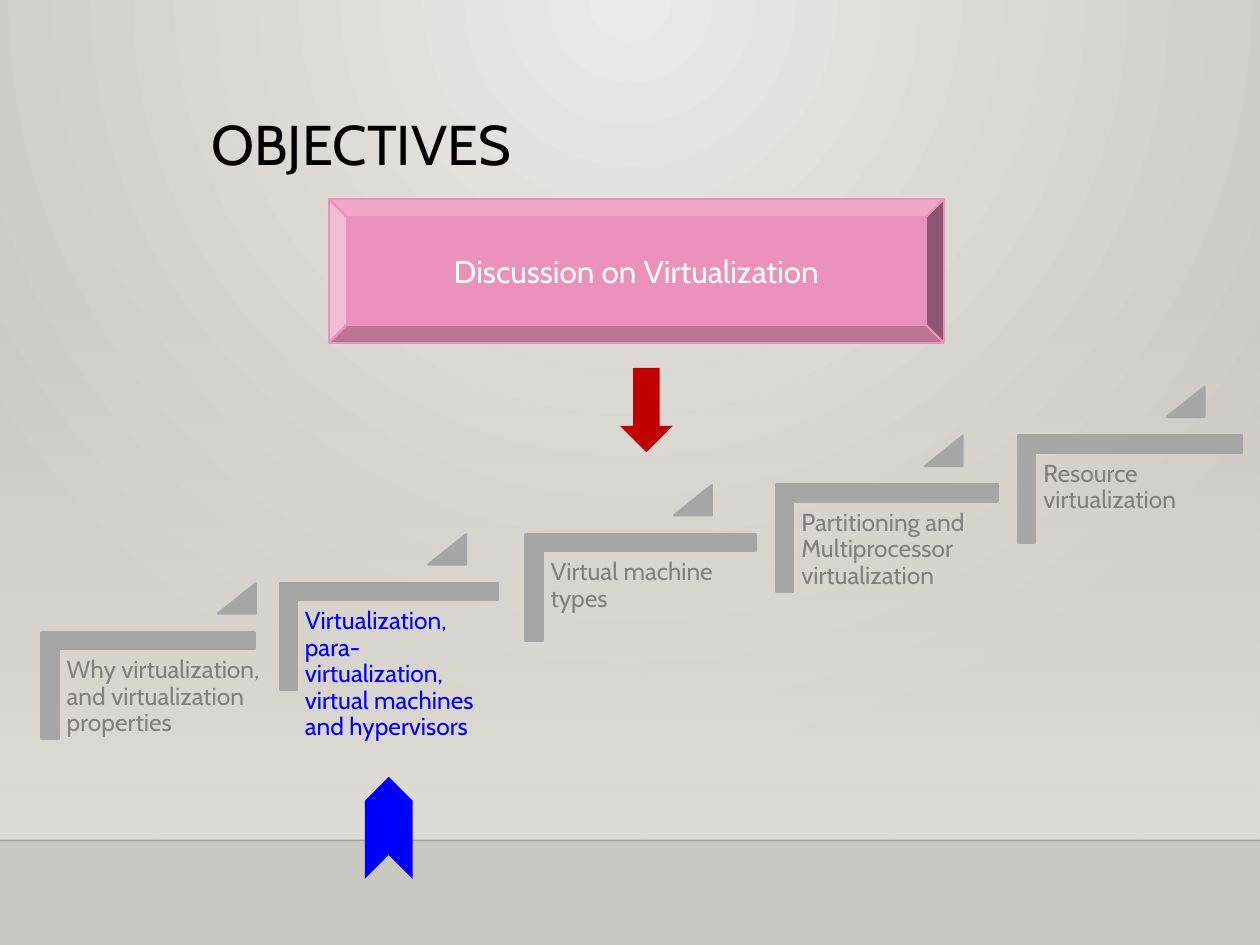
from lxml import etree
from pptx import Presentation
from pptx.dml.color import RGBColor
from pptx.enum.shapes import MSO_CONNECTOR as Line, MSO_SHAPE as Shape
from pptx.enum.text import MSO_ANCHOR as Anchor, PP_ALIGN as Align
from pptx.oxml.ns import qn
from pptx.util import Inches, Pt

THEME = {
    "font": "Cabin",
    "title_size": 32, "banner_size": 18, "step_size": 14,
    "black": "000000", "white": "FFFFFF", "pink": "EB91BB", "red": "C00000",
    "blue": "0000FF", "stair": "A6A6A6", "muted": "808080",
    "glow": "ECEAE7", "edge": "CAC7C1", "wall": "DFDBD5", "horizon": "000001",
}
TITLE = "OBJECTIVES"
BANNER = "Discussion on Virtualization"
STEPS = [
    {"text": "Why virtualization, and virtualization properties",
     "left": 0.47, "width": 1.7, "tread": 1.69, "flag": 1.73, "color": "muted"},
    {"text": "Virtualization, para-virtualization, virtual machines and hypervisors",
     "left": 2.36, "width": 1.56, "tread": 1.73, "flag": 3.4, "color": "blue"},
    {"text": "Virtual machine types",
     "left": 4.31, "width": 1.66, "tread": 1.83, "flag": 5.35, "color": "muted"},
    {"text": "Partitioning and Multiprocessor virtualization",
     "left": 6.3, "width": 1.59, "tread": 1.76, "flag": 7.34, "color": "muted"},
    {"text": "Resource virtualization",
     "left": 8.22, "width": 1.61, "tread": 1.78, "flag": 9.26, "color": "muted"},
]
FIRST_TOP, RISE, RISER = 5.16, 0.39, 0.85


def rgb(name):
    return RGBColor.from_string(THEME[name])


def set_alpha(element, percent):
    color = element.find(".//" + qn("a:srgbClr"))
    etree.SubElement(color, qn("a:alpha"), val=str(percent * 1000))


def set_gradient(fill, names):
    fill.gradient()
    for stop, name, position in zip(fill.gradient_stops, names, (0, 1)):
        stop.color.rgb = rgb(name)
        stop.position = position


def add_shape(page, kind, frame, fill, line=None, rotation=0, adjustments=()):
    shape = page.shapes.add_shape(kind, *map(Inches, frame))
    shape.shadow.inherit = False
    shape.rotation = rotation
    for index, value in enumerate(adjustments):
        shape.adjustments[index] = value
    shape.fill.solid()
    shape.fill.fore_color.rgb = rgb(fill)
    if line:
        shape.line.color.rgb = rgb(line)
        shape.line.width = Pt(1.25)
    else:
        shape.line.fill.background()
    return shape


def write(shape, text, size, color, spacing=1.0, align=Align.LEFT, anchor=Anchor.TOP):
    frame = shape.text_frame
    frame.word_wrap = True
    frame.vertical_anchor = anchor
    para = frame.paragraphs[0]
    para.alignment = align
    para.line_spacing = spacing
    span = para.add_run()
    span.text = text
    span.font.name = THEME["font"]
    span.font.size = Pt(THEME[size])
    span.font.color.rgb = rgb(color)


def add_backdrop(page):
    set_gradient(page.background.fill, ("glow", "edge"))
    gradient = page.element.find(".//" + qn("a:gradFill"))
    gradient.remove(gradient.find(qn("a:lin")))
    circle = etree.SubElement(gradient, qn("a:path"), path="circle")
    etree.SubElement(circle, qn("a:fillToRect"), l="43000", t="0", r="43000", b="100000")

    wall = add_shape(page, Shape.RECTANGLE, (0, 2.2, 10, 4.46), "wall")
    set_gradient(wall.fill, ("wall", "wall"))
    wall.fill.gradient_angle = 270
    set_alpha(wall.element, 0)

    horizon = page.shapes.add_connector(
        Line.STRAIGHT, Inches(0), Inches(6.67), Inches(10), Inches(6.67))
    horizon.line.color.rgb = rgb("horizon")
    horizon.line.width = Pt(1)
    set_alpha(horizon.element, 20)
    etree.SubElement(horizon.element.spPr, qn("a:effectLst"))


def add_step(page, index, step):
    top = FIRST_TOP - index * RISE
    center_x = step["left"] - 0.14 + step["tread"] / 2
    center_y = top + 0.28
    corner = (center_x - RISER / 2, center_y - step["tread"] / 2, RISER, step["tread"])
    add_shape(page, Shape.CORNER, corner, "stair", "stair", 90, (0.16, 0.16))
    add_shape(page, Shape.ISOSCELES_TRIANGLE, (step["flag"], top - 0.53, 0.3, 0.24),
              "stair", "stair", adjustments=(1,))
    box = page.shapes.add_textbox(*map(Inches, (step["left"], top, step["width"], 1.12)))
    frame = box.text_frame
    frame.margin_left = frame.margin_right = Inches(0.06)
    frame.margin_top = frame.margin_bottom = Inches(0.06)
    write(box, step["text"], "step_size", step["color"], 0.9)


def main():
    """Build the objectives slide with its staircase of topics."""
    deck = Presentation()
    deck.slide_width, deck.slide_height = Inches(10), Inches(7.5)
    page = deck.slides.add_slide(deck.slide_layouts[6])
    add_backdrop(page)

    title = page.shapes.add_textbox(*map(Inches, (1.58, 0.88, 7.19, 1.15)))
    write(title, TITLE, "title_size", "black", 0.9)
    banner = add_shape(page, Shape.BEVEL, (2.61, 1.58, 4.88, 1.14), "pink", "pink")
    write(banner, BANNER, "banner_size", "white", align=Align.CENTER, anchor=Anchor.MIDDLE)
    add_shape(page, Shape.DOWN_ARROW, (4.92, 2.92, 0.42, 0.67), "red")

    for index, step in enumerate(STEPS):
        add_step(page, index, step)
    add_shape(page, Shape.CHEVRON, (2.68, 6.38, 0.81, 0.38), "blue", rotation=270)
    deck.save("out.pptx")


if __name__ == "__main__":
    main()
